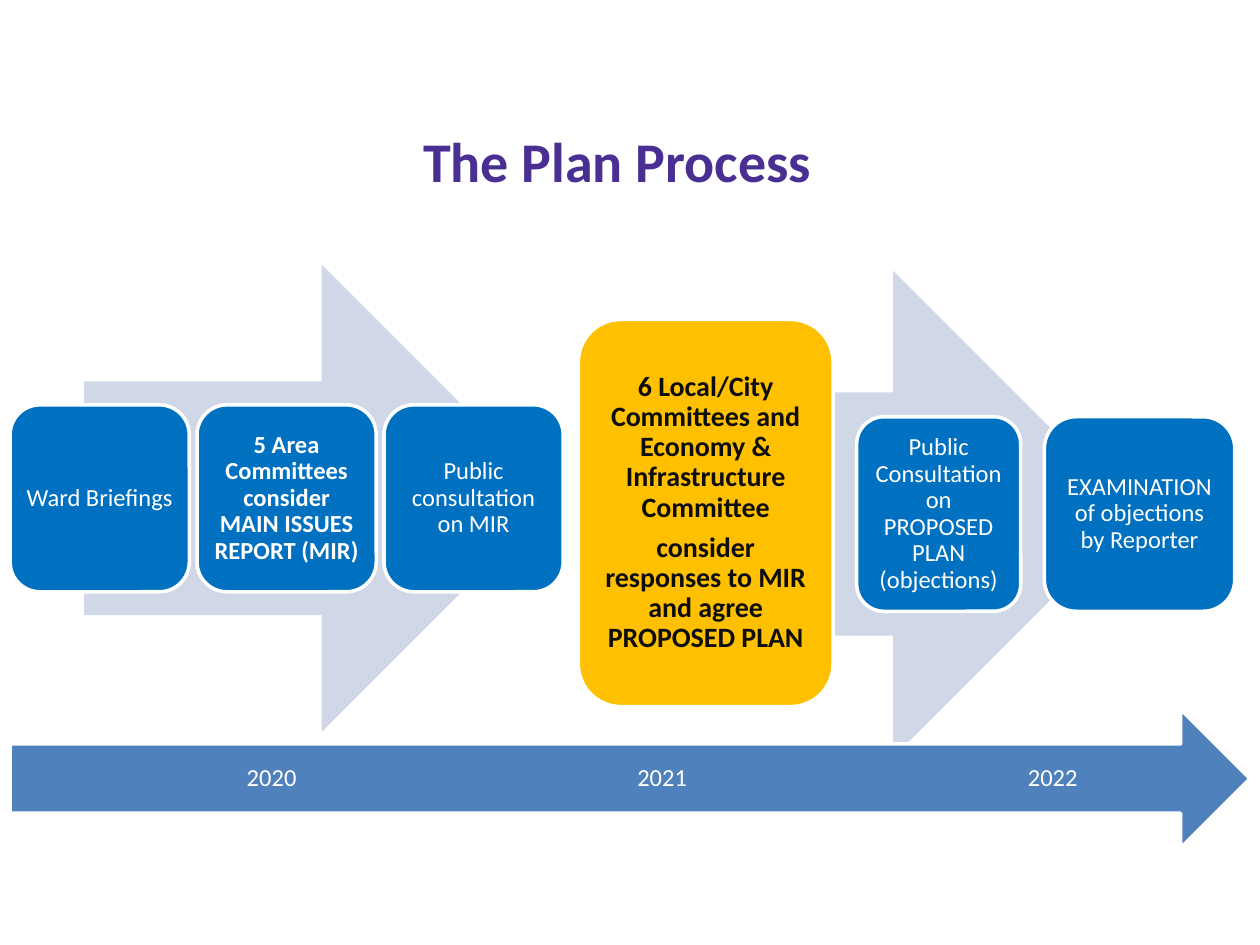
from pptx import Presentation
from pptx.dml.color import RGBColor
from pptx.enum.shapes import MSO_SHAPE as Kind
from pptx.enum.text import MSO_ANCHOR as Anchor, PP_ALIGN as Align
from pptx.util import Inches, Pt

BLUE = RGBColor(0x00, 0x70, 0xC0)
GOLD = RGBColor(0xFF, 0xC0, 0x00)
PALE = RGBColor(0xD0, 0xD8, 0xE8)
STEEL = RGBColor(0x4F, 0x81, 0xBD)
PURPLE = RGBColor(0x49, 0x2F, 0x92)
WHITE = RGBColor(0xFF, 0xFF, 0xFF)
INK = RGBColor(0x0D, 0x0D, 0x0D)

TITLE = (0.92, 0.95, 7.96, 1.48)
REPORT = (0.08, 2.1, 4.39, 3.71)
PLAN = (4.59, 2.15, 5.21, 3.86)
TIME = (0.08, 5.63, 9.84, 1.1)


def part(box, x, y, w, h):
    left, top, wide, high = box
    return left + x * wide, top + y * high, w * wide, h * high


def write(frame, lines, size, color, bold=False, pad=(0.06, 0.06), anchor=Anchor.MIDDLE):
    side, edge = map(Inches, pad)
    look = {"word_wrap": True, "vertical_anchor": anchor, "margin_left": side,
            "margin_right": side, "margin_top": edge, "margin_bottom": edge}
    for key, value in look.items():
        setattr(frame, key, value)
    frame.text = "\n".join(lines)
    for para in frame.paragraphs:
        para.alignment = Align.CENTER
        para.line_spacing = 0.9
        para.space_before = Pt(0)
        para.space_after = Pt(0.35 * size)
        font = para.runs[0].font
        font.color.rgb = color
        for key, value in {"name": "Calibri", "size": Pt(size), "bold": bold}.items():
            setattr(font, key, value)


def draw(slide, kind, box, fill, edge=True):
    shape = slide.shapes.add_shape(kind, *map(Inches, box))
    shape.shadow.inherit = False
    shape.fill.solid()
    shape.fill.fore_color.rgb = fill
    if edge:
        shape.line.color.rgb = WHITE
        shape.line.width = Pt(2)
    else:
        shape.line.fill.background()
    return shape


def head(slide, box):
    title = slide.shapes.title
    for key, value in zip(("left", "top", "width", "height"), box):
        setattr(title, key, Inches(value))
    write(title.text_frame, ["The Plan Process"], 32, PURPLE, True, (0.1, 0.05), Anchor.TOP)
    title.text_frame.paragraphs[0].line_spacing = 1


def card(slide, box, text, bold=False):
    shape = draw(slide, Kind.ROUNDED_RECTANGLE, box, BLUE)
    write(shape.text_frame, [text], 14, WHITE, bold)


def report(slide, box):
    draw(slide, Kind.RIGHT_ARROW, part(box, 0.134, 0, 0.852, 1), PALE, False)
    steps = [("Ward Briefings", False),
             ("5 Area Committees consider MAIN ISSUES REPORT (MIR)", True),
             ("Public consultation on MIR", False)]
    for i, (text, bold) in enumerate(steps):
        card(slide, part(box, i * 0.338, 0.3, 0.324, 0.4), text, bold)


def plan(slide, box):
    draw(slide, Kind.RIGHT_ARROW, part(box, 0, 0, 0.85, 1), PALE, False)
    gold = draw(slide, Kind.ROUNDED_RECTANGLE, part(box, 0, 0.1, 0.388, 0.796), GOLD)
    lines = ["6 Local/City Committees and Economy & Infrastructure Committee",
             "consider responses to MIR and agree PROPOSED PLAN"]
    write(gold.text_frame, lines, 16, INK, True, (0.07, 0.07))
    steps = [(0.424, 0.25, "Public Consultation on PROPOSED PLAN (objections)"),
             (0.71, 0.29, "EXAMINATION of objections by Reporter")]
    for x, w, text in steps:
        card(slide, part(box, x, 0.3, w, 0.4), text)


def years(slide, box):
    draw(slide, Kind.RIGHT_ARROW, box, STEEL)
    for i, year in enumerate(("2020", "2021", "2022")):
        spot = part(box, 0.08 + i * 0.315, 0.25, 0.262, 0.5)
        label = slide.shapes.add_textbox(*map(Inches, spot))
        write(label.text_frame, [year], 14, WHITE, pad=(0, 0.16))


def main():
    deck = Presentation()
    deck.slide_width, deck.slide_height = Inches(10), Inches(7.5)
    slide = deck.slides.add_slide(deck.slide_layouts[5])
    head(slide, TITLE)
    report(slide, REPORT)
    plan(slide, PLAN)
    years(slide, TIME)
    deck.save("out.pptx")


if __name__ == "__main__":
    main()
